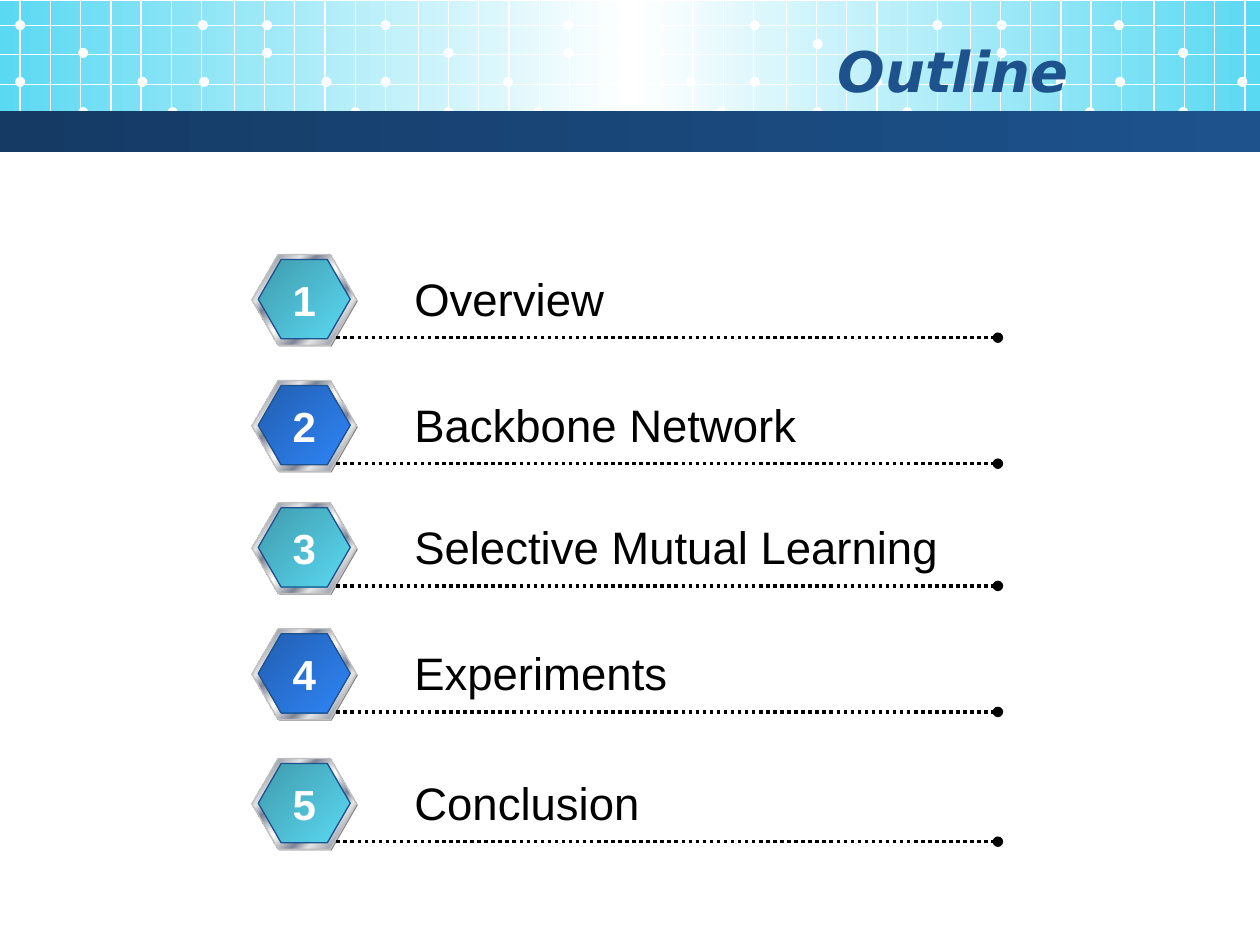
from lxml.etree import SubElement
from pptx import Presentation
from pptx.dml.color import RGBColor
from pptx.enum.dml import MSO_LINE
from pptx.enum.shapes import MSO_CONNECTOR, MSO_SHAPE
from pptx.enum.text import MSO_ANCHOR, MSO_AUTO_SIZE, PP_ALIGN
from pptx.oxml.ns import qn
from pptx.util import Inches, Pt

COLORS = {
    "white": "FFFFFF", "black": "000000", "cyan": "5AD9F2", "teal": "409BAD",
    "navy": "153B65", "blue": "1D528D", "royal": "225FB1", "azure": "2F85F7",
    "shade": "808080", "rim": "C0C0C0", "silver": "E6E6E6", "steel": "7D8496",
}


def set_text(shape, text, size, color, font="Arial", bold=False, italic=False,
             align=PP_ALIGN.LEFT, anchor=MSO_ANCHOR.TOP, wrap=False,
             auto_size=MSO_AUTO_SIZE.SHAPE_TO_FIT_TEXT):
    frame = shape.text_frame
    frame.word_wrap = wrap
    frame.auto_size = auto_size
    frame.vertical_anchor = anchor
    paragraph = frame.paragraphs[0]
    paragraph.alignment = align
    run = paragraph.add_run()
    run.text = text
    run.font.size = Pt(size)
    run.font.name = font
    run.font.bold = bold
    run.font.italic = italic
    run.font.color.rgb = RGBColor.from_string(COLORS[color])


def paint(shape, stops=(), angle=0, line=None, width=0.75):
    if len(stops) == 1:
        shape.fill.solid()
        shape.fill.fore_color.rgb = RGBColor.from_string(COLORS[stops[0][1]])
    elif stops:
        shape.fill.gradient()
        shape.fill.gradient_angle = -angle % 360
        stop_list = shape._element.spPr.find(".//" + qn("a:gsLst"))
        for old_stop in list(stop_list):
            stop_list.remove(old_stop)
        for position, color in stops:
            stop = SubElement(stop_list, qn("a:gs"), pos=str(position * 1000))
            SubElement(stop, qn("a:srgbClr"), val=COLORS[color])
    if line:
        shape.line.color.rgb = RGBColor.from_string(COLORS[line])
        shape.line.width = Pt(width)
    else:
        shape.line.fill.background()
    SubElement(shape._element.spPr, qn("a:effectLst"))


prs = Presentation()
prs.slide_width = Inches(10)
prs.slide_height = Inches(7.5)
slide = prs.slides.add_slide(prs.slide_layouts[5])
shapes = slide.shapes

banner = shapes.add_shape(MSO_SHAPE.RECTANGLE, 0, Inches(0.01), Inches(10), Inches(1.02))
paint(banner, [(0, "cyan"), (50, "white"), (100, "cyan")])

grid = shapes.add_group_shape().shapes
columns = [0.16] + [0.4 + 1.46 * block + 0.24 * step for block in range(7) for step in range(6)]
grid_lines = [(x, 0, x, 1.1) for x in columns if x < 9.9]
grid_lines += [(0, y, 10, y) for y in (0.2, 0.43, 0.67, 0.89)]
for ends in grid_lines:
    grid_line = grid.add_connector(MSO_CONNECTOR.STRAIGHT, *[Inches(end) for end in ends])
    paint(grid_line, line="white")

dot_rows = {
    0.16: [0.12, 1.57, 2.08, 3.02, 4.47, 4.97, 5.95, 7.4, 7.91, 8.84],
    0.31: [6.45],
    0.38: [0.62, 2.08, 3.52, 4.47, 4.97, 7.91, 9.35],
    0.47: [7.41],
    0.61: [0.12, 1.09, 1.58, 2.55, 3.02, 3.99, 5.44, 5.95, 6.92, 8.38, 8.85, 9.82],
    0.85: [0.62, 1.33, 2.78, 3.52, 4.23, 5.68, 6.45, 7.16, 8.61, 9.35],
}
for top, lefts in dot_rows.items():
    for left in lefts:
        dot = grid.add_shape(MSO_SHAPE.OVAL, Inches(left), Inches(top), Inches(0.08), Inches(0.08))
        paint(dot, [(0, "white")])

stripe = shapes.add_shape(MSO_SHAPE.RECTANGLE, 0, Inches(0.88), Inches(10), Inches(0.33))
paint(stripe, [(0, "navy"), (100, "blue")])

title = shapes.title
title.left, title.top, title.width, title.height = [Inches(v) for v in (0.5, 0.25, 8.08, 0.62)]
set_text(title, "Outline", 32, "blue", font="DejaVu Sans", bold=True, italic=True,
         align=PP_ALIGN.RIGHT, anchor=MSO_ANCHOR.MIDDLE, wrap=True, auto_size=MSO_AUTO_SIZE.NONE)
shapes._spTree.append(title._element)

metal = list(zip((0, 8, 26, 34, 46, 50, 54, 66, 74, 92, 100),
                 ("silver", "steel", "silver", "steel", "silver", "white",
                  "silver", "steel", "silver", "steel", "silver")))
badge_fills = [[(0, "teal"), (100, "cyan")], [(0, "royal"), (100, "azure")]]
topics = [
    ("Overview", 2.02, 1.72),
    ("Backbone Network", 3.02, 3.27),
    ("Selective Mutual Learning", 3.99, 4.4),
    ("Experiments", 4.99, 2.23),
    ("Conclusion", 6.02, 2.01),
]
for number, (topic, top, topic_width) in enumerate(topics, 1):
    badge = shapes.add_group_shape().shapes
    layers = [
        (2.01, top + 0.01, 0.83, 0.72, [(0, "shade")], None),
        (2, top, 0.83, 0.72, metal, "rim"),
        (2.05, top + 0.04, 0.73, 0.63, badge_fills[(number - 1) % 2], "blue"),
    ]
    for *box, stops, outline in layers:
        hexagon = badge.add_shape(MSO_SHAPE.HEXAGON, *[Inches(v) for v in box])
        hexagon.adjustments[0] = 0.289
        paint(hexagon, stops, angle=45, line=outline)

    rule_y = Inches(top + 0.66)
    rule = shapes.add_connector(MSO_CONNECTOR.STRAIGHT, Inches(2.67), rule_y, Inches(7.92), rule_y)
    paint(rule, line="black", width=2)
    rule.line.dash_style = MSO_LINE.ROUND_DOT
    SubElement(rule.line._get_or_add_ln(), qn("a:tailEnd"), type="oval")

    topic_label = shapes.add_textbox(Inches(3.19), Inches(top + 0.08), Inches(topic_width), Inches(0.54))
    set_text(topic_label, topic, 26, "black")
    number_label = shapes.add_textbox(Inches(2.22), Inches(top + 0.11), Inches(0.39), Inches(0.5))
    set_text(number_label, str(number), 24, "white", bold=True, align=PP_ALIGN.CENTER)

prs.save("out.pptx")
